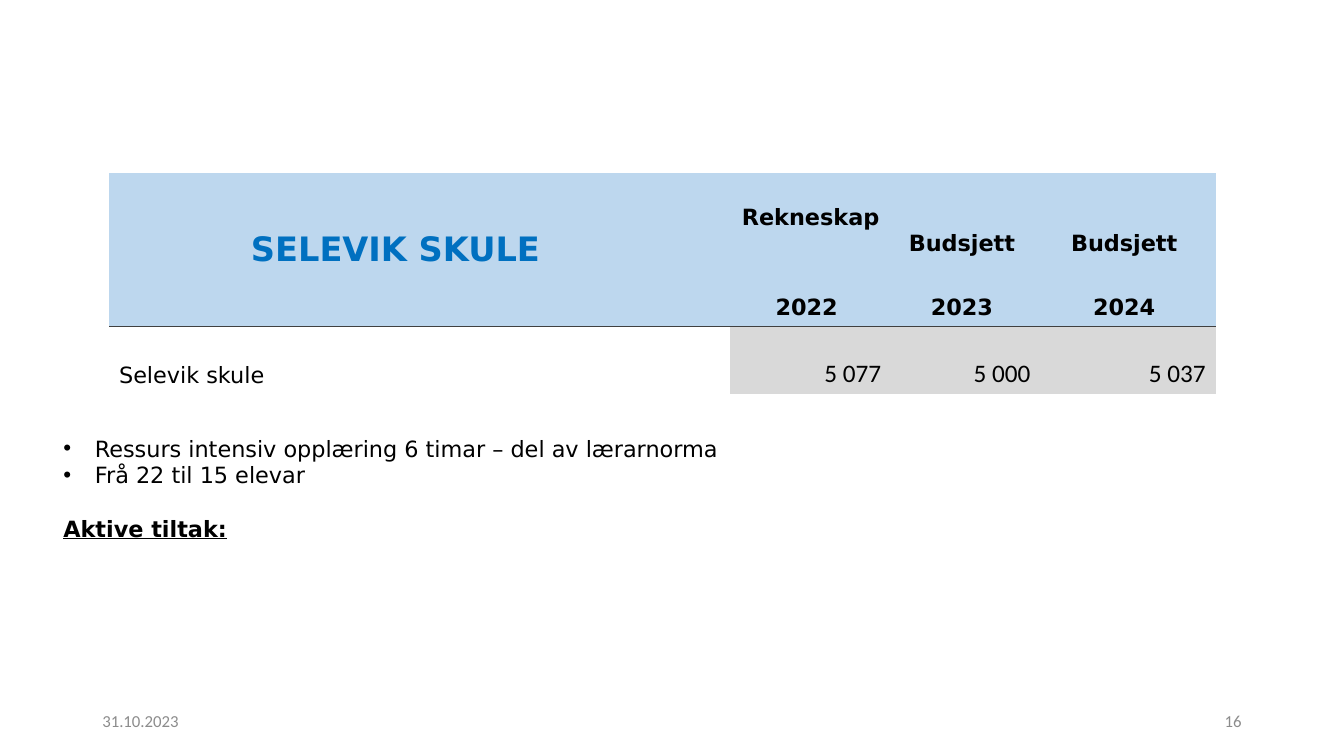
from lxml.etree import SubElement
from pptx import Presentation
from pptx.dml.color import RGBColor
from pptx.enum.text import MSO_ANCHOR, PP_ALIGN
from pptx.oxml import parse_xml
from pptx.oxml.ns import qn
from pptx.util import Pt

NAMESPACE = "http://schemas.openxmlformats.org/drawingml/2006/main"
PLAIN_STYLE = "{2D5ABB26-0587-4C30-8999-92F81FD0307C}"
BODY_FONT = "DejaVu Sans"
HEADER_FILL = "BDD7EE"
VALUE_FILL = "D9D9D9"
COLUMN_SHARES = [6.16, 1.6, 1.48, 1.74]
ROW_HEIGHTS = [63.5, 46, 48.5]
ROWS = [
    ["", "Rekneskap", "Budsjett", "Budsjett"],
    ["", "2022", "2023", "2024"],
    ["Selevik skule", "5 077", "5 000", "5 037"],
]


def color(value):
    return RGBColor.from_string(value)


def format_paragraph(para, size, name=BODY_FONT, shade="000000", bold=False, align=PP_ALIGN.LEFT):
    para.alignment = align
    for span in para.runs:
        span.font.size = Pt(size)
        span.font.name = name
        span.font.bold = bold
        span.font.color.rgb = color(shade)


def add_text_box(page, left, top, width, height):
    frame = page.shapes.add_textbox(Pt(left), Pt(top), Pt(width), Pt(height)).text_frame
    frame.word_wrap = True
    return frame


def add_rule(cell, side):
    line = parse_xml(
        f'<a:{side} xmlns:a="{NAMESPACE}" w="9525"><a:solidFill>'
        f'<a:srgbClr val="404040"/></a:solidFill></a:{side}>'
    )
    cell._tc.get_or_add_tcPr().insert(0, line)


def format_cell(cell, row, column):
    cell.vertical_anchor = MSO_ANCHOR.BOTTOM
    para = cell.text_frame.paragraphs[0]
    if row < 2:
        cell.fill.solid()
        cell.fill.fore_color.rgb = color(HEADER_FILL)
        format_paragraph(para, 16, bold=True, align=PP_ALIGN.CENTER)
        if cell.text == "Rekneskap":
            cell.margin_bottom = Pt(22.2)
        else:
            cell.margin_right = Pt(12.8)
    elif column:
        cell.fill.solid()
        cell.fill.fore_color.rgb = color(VALUE_FILL)
        format_paragraph(para, 18, "Calibri", align=PP_ALIGN.RIGHT)
    else:
        cell.fill.background()
        format_paragraph(para, 16)
    if row:
        add_rule(cell, "lnB" if row == 1 else "lnT")


def add_budget_table(page, left, top, width):
    frame = page.shapes.add_table(
        len(ROWS), len(COLUMN_SHARES), Pt(left), Pt(top), Pt(width), Pt(sum(ROW_HEIGHTS))
    )
    table = frame.table
    table.first_row = False
    table.horz_banding = False
    next(frame.element.iter(qn("a:tableStyleId"))).text = PLAIN_STYLE
    for column, share in zip(table.columns, COLUMN_SHARES):
        column.width = Pt(width * share / sum(COLUMN_SHARES))
    for row, height in enumerate(ROW_HEIGHTS):
        table.rows[row].height = Pt(height)
        for column, text in enumerate(ROWS[row]):
            cell = table.cell(row, column)
            cell.text_frame.text = text
            format_cell(cell, row, column)


def place_title(page, left, top, width, height):
    title = page.shapes.title
    title.left, title.top, title.width, title.height = Pt(left), Pt(top), Pt(width), Pt(height)
    title.text_frame.text = "SELEVIK SKULE"
    title.text_frame.vertical_anchor = MSO_ANCHOR.TOP
    format_paragraph(
        title.text_frame.paragraphs[0], 24, shade="0070C0", bold=True, align=PP_ALIGN.CENTER
    )
    title.element.getparent().append(title.element)


def add_notes_block(page, left, top, width, height):
    frame = add_text_box(page, left, top, width, height)
    frame.text = (
        "Ressurs intensiv opplæring 6 timar – del av lærarnorma\n"
        "Frå 22 til 15 elevar\n"
        "Aktive tiltak:"
    )
    *bullets, heading = frame.paragraphs
    for para in bullets:
        properties = para._p.get_or_add_pPr()
        properties.set("marL", str(Pt(22.5)))
        properties.set("indent", str(-Pt(22.5)))
        SubElement(properties, qn("a:buFont"), typeface="Arial")
        SubElement(properties, qn("a:buChar"), char="•")
        format_paragraph(para, 16)
    heading.space_before = Pt(19)
    format_paragraph(heading, 16, bold=True)
    heading.runs[0].font.underline = True


def add_footer(page, left, top, width, height):
    part = 216
    for text, start, align in [
        ("31.10.2023", left, PP_ALIGN.LEFT),
        ("16", left + width - part, PP_ALIGN.RIGHT),
    ]:
        frame = add_text_box(page, start, top, part, height)
        frame.vertical_anchor = MSO_ANCHOR.MIDDLE
        frame.text = text
        format_paragraph(frame.paragraphs[0], 12, "Calibri", "8C8C8C", align=align)


def main():
    deck = Presentation()
    deck.slide_width, deck.slide_height = Pt(960), Pt(540)
    page = deck.slides.add_slide(deck.slide_layouts[5])
    add_footer(page, 66, 500.5, 828, 28.75)
    add_notes_block(page, 38.2, 307, 850, 82)
    add_budget_table(page, 77.9, 123.4, 790.6)
    place_title(page, 42.5, 159.1, 480, 36)
    deck.save("out.pptx")


if __name__ == "__main__":
    main()
